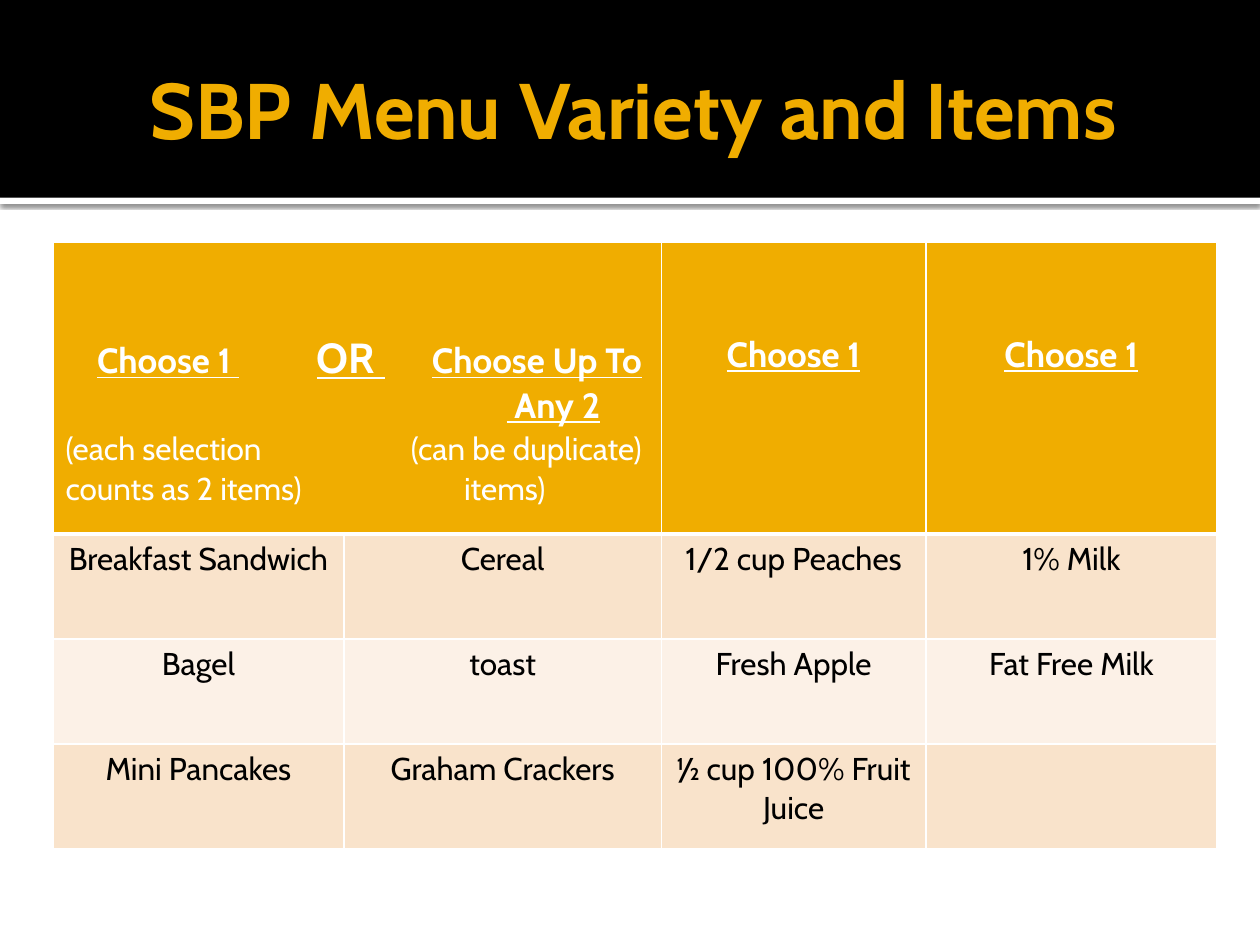
from lxml.etree import SubElement, fromstring
from pptx import Presentation
from pptx.dml.color import RGBColor
from pptx.enum.shapes import MSO_SHAPE as Shape
from pptx.enum.text import MSO_ANCHOR as Anchor, PP_ALIGN as Align
from pptx.oxml.ns import nsdecls, qn
from pptx.util import Pt

BLACK = RGBColor(0x00, 0x00, 0x00)
WHITE = RGBColor(0xFF, 0xFF, 0xFF)
GOLD = RGBColor(0xF0, 0xAD, 0x00)
PEACH = RGBColor(0xF9, 0xE3, 0xCB)
CREAM = RGBColor(0xFC, 0xF1, 0xE7)


def add_text(para, text, size=18, color=BLACK, bold=False, underline=False, align=None):
    if align is not None:
        para.alignment = align
    span = para.add_run()
    span.text = text
    font = span.font
    font.name, font.size, font.color.rgb = "Cabin", Pt(size), color
    font.bold, font.underline = bold, underline


def set_borders(cell, top, bottom):
    widths = {"lnL": 1, "lnR": 1, "lnT": top, "lnB": bottom}
    for index, (side, width) in enumerate(widths.items()):
        line = fromstring(
            f'<a:{side} {nsdecls("a")} w="{Pt(width)}"><a:solidFill>'
            f'<a:srgbClr val="{WHITE}"/></a:solidFill></a:{side}>')
        cell._tc.get_or_add_tcPr().insert(index, line)


deck = Presentation()
deck.slide_width, deck.slide_height = Pt(720), Pt(540)
page = deck.slides.add_slide(deck.slide_layouts[6])

# Title band: a shadowed white strip under a black bar
for top, height, color in ((113, 3.6, WHITE), (0, 113, BLACK)):
    band = page.shapes.add_shape(Shape.RECTANGLE, 0, Pt(top), Pt(720), Pt(height))
    band.shadow.inherit = False
    band.fill.solid()
    band.fill.fore_color.rgb = color
    band.line.fill.background()
    if color == WHITE:
        effects = band._element.spPr.find(qn("a:effectLst"))
        effects.append(fromstring(
            f'<a:outerShdw {nsdecls("a")} blurRad="{Pt(2.5)}" dist="{Pt(0.8)}" dir="5400000">'
            '<a:srgbClr val="000000"><a:alpha val="60000"/></a:srgbClr></a:outerShdw>'))

# Title
box = page.shapes.add_textbox(Pt(36), Pt(12.24), Pt(648), Pt(98.64))
frame = box.text_frame
frame.word_wrap = True
frame.vertical_anchor = Anchor.MIDDLE
frame.margin_left = Pt(7.2)
frame.margin_right = frame.margin_top = frame.margin_bottom = Pt(3.6)
add_text(frame.paragraphs[0], "SBP Menu Variety and Items", size=45, color=GOLD,
         bold=True, align=Align.CENTER)

# Menu table
column_widths = (166.3, 181.4, 151.2, 166.3)
row_heights = (167, 60, 60, 60)
menu = page.shapes.add_table(4, 4, Pt(30.24), Pt(138.24), Pt(sum(column_widths)),
                             Pt(sum(row_heights))).table
menu.first_row = menu.horz_banding = False
for column, width in zip(menu.columns, column_widths):
    column.width = Pt(width)
for row, height in zip(menu.rows, row_heights):
    row.height = Pt(height)

for r, fill in enumerate((GOLD, PEACH, CREAM, PEACH)):
    for cell in menu.rows[r].cells:
        cell.fill.solid()
        cell.fill.fore_color.rgb = fill
        set_borders(cell, top=3 if r == 1 else 1, bottom=3 if r == 0 else 1)
        if r == 0:
            cell.margin_top = Pt(52.3)

# Header across the first two columns: each line has its tab stops and spans
heading = {"size": 20, "bold": True, "color": WHITE}
linked = {**heading, "underline": True}
note = {"size": 18, "color": WHITE}
header_lines = (
    ((18, 143.7, 209.4), (("\t", heading), ("Choose 1 ", linked), ("\t", heading),
                          ("OR ", {**linked, "size": 24}), ("\t", heading),
                          ("Choose Up To", linked))),
    ((252,), (("\t", heading), (" Any 2", linked))),
    ((197.4,), (("(each selection", note), ("\t", heading), ("(can be duplicate)", note))),
    ((227.7,), (("counts as 2 items)\titems)", note),)),
)
menu.cell(0, 0).merge(menu.cell(0, 1))
frame = menu.cell(0, 0).text_frame
for index, (stops, spans) in enumerate(header_lines):
    para = frame.add_paragraph() if index else frame.paragraphs[0]
    tabs = SubElement(para._p.get_or_add_pPr(), qn("a:tabLst"))
    for stop in stops:
        SubElement(tabs, qn("a:tab"), pos=str(Pt(stop)), algn="l")
    for text, style in spans:
        add_text(para, text, **style)

# Headers of the last two columns
for c in (2, 3):
    add_text(menu.cell(0, c).text_frame.paragraphs[0], "Choose 1", align=Align.CENTER, **linked)

# Menu items
items = (
    ("Breakfast Sandwich", "Cereal", "1/2 cup Peaches", "1% Milk"),
    ("Bagel", "toast", "Fresh Apple", "Fat Free Milk"),
    ("Mini Pancakes", "Graham Crackers", "½ cup 100% Fruit Juice"),
)
for r, names in enumerate(items, start=1):
    for c, name in enumerate(names):
        add_text(menu.cell(r, c).text_frame.paragraphs[0], name, align=Align.CENTER)

deck.save("out.pptx")
